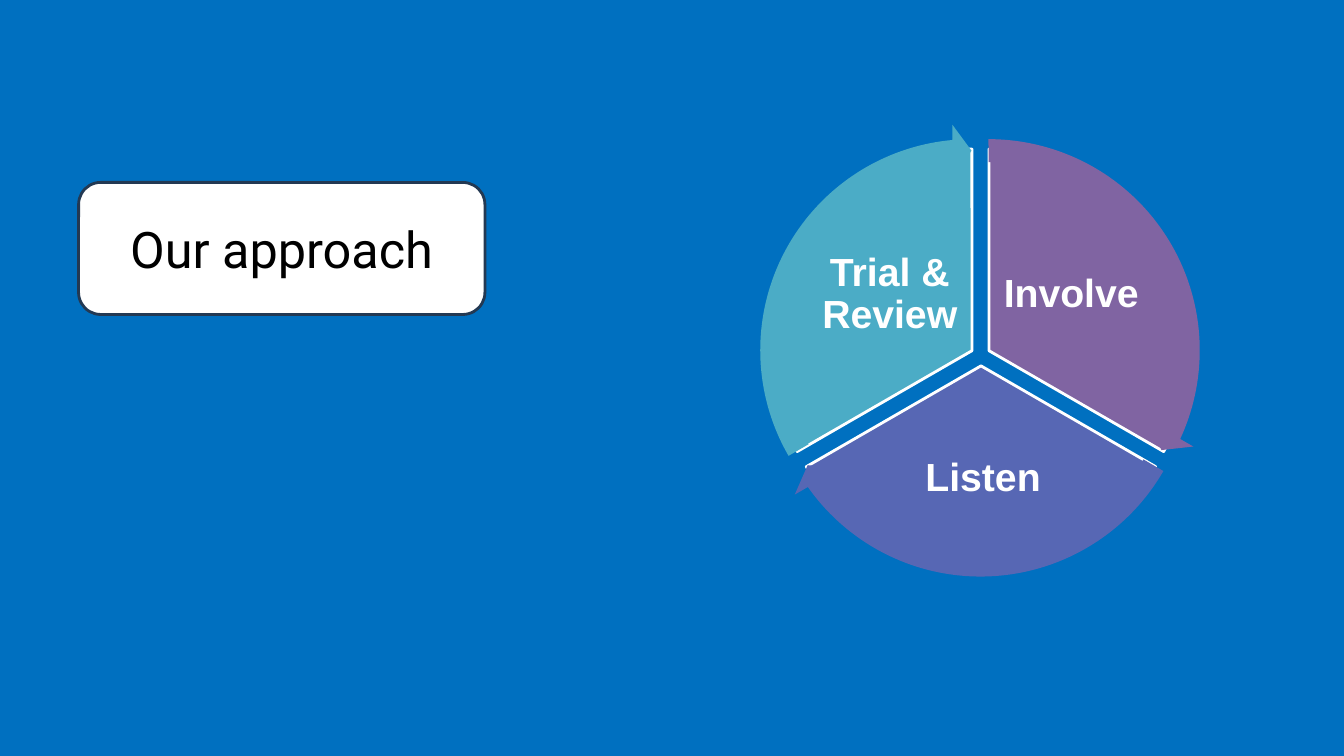
from pptx import Presentation
from pptx.dml.color import RGBColor
from pptx.enum.shapes import MSO_SHAPE
from pptx.enum.text import MSO_ANCHOR, PP_ALIGN
from pptx.util import Inches, Pt

PIE = MSO_SHAPE.PIE
CIRCULAR_ARROW = MSO_SHAPE.CIRCULAR_ARROW
ROUNDED = MSO_SHAPE.ROUNDED_RECTANGLE
MIDDLE = MSO_ANCHOR.MIDDLE
CENTER = PP_ALIGN.CENTER

COLORS = {
    "background": "0070C0",
    "white": "FFFFFF",
    "black": "000000",
    "navy": "233953",
    "purple": "8064A2",
    "indigo": "5767B4",
    "teal": "4BACC6",
}

PIE_SIZE = 4
ARROW_SIZE = 4.49
ARROW_OFFSET = 0.25

# Label, colour, pie corner, pie angles, arrow angles, label box
STAGES = [
    ("Involve", "purple", (7.81, 1.48), (162, 18),
     (14.73, 161.99), (9.91, 2.33, 1.43, 1.19)),
    ("Listen", "indigo", (7.73, 1.63), (18, 90),
     (86.72, 18.01), (8.68, 4.22, 2.14, 1.05)),
    ("Trial & Review", "teal", (7.64, 1.48), (90, 162),
     (158.73, 90), (8.11, 2.33, 1.43, 1.19)),
]


def write_text(shape, text, font="Arial", size=28, color="white", bold=False,
               line_spacing=None, inset=None):
    """Fill a shape with one centred paragraph."""
    frame = shape.text_frame
    frame.word_wrap = True
    frame.vertical_anchor = MIDDLE
    if inset is not None:
        frame.margin_left = frame.margin_right = Inches(inset)
        frame.margin_top = frame.margin_bottom = Inches(inset)
    paragraph = frame.paragraphs[0]
    paragraph.alignment = CENTER
    if line_spacing:
        paragraph.line_spacing = line_spacing
    run = paragraph.add_run()
    run.text = text
    run.font.name = font
    run.font.size = Pt(size)
    run.font.bold = bold
    run.font.color.rgb = RGBColor.from_string(COLORS[color])


class SlideBuilder:
    """Holds the palette and the slide being built."""

    def __init__(self, slide, colors):
        self.slide = slide
        self.colors = colors

    def rgb(self, name):
        return RGBColor.from_string(self.colors[name])

    def background(self, color):
        fill = self.slide.background.fill
        fill.solid()
        fill.fore_color.rgb = self.rgb(color)

    def shape(self, kind, box, fill, line=None, adjustments=()):
        shape = self.slide.shapes.add_shape(kind, *map(Inches, box))
        shape.shadow.inherit = False
        for index, value in enumerate(adjustments):
            shape.adjustments[index] = value
        shape.fill.solid()
        shape.fill.fore_color.rgb = self.rgb(fill)
        if line:
            shape.line.color.rgb = self.rgb(line)
            shape.line.width = Pt(2)
        else:
            shape.line.fill.background()
        return shape

    def label(self, box, text, **text_format):
        textbox = self.slide.shapes.add_textbox(*map(Inches, box))
        write_text(textbox, text, **text_format)


def main():
    presentation = Presentation()
    presentation.slide_width = Inches(13.33)
    presentation.slide_height = Inches(7.5)
    slide = presentation.slides.add_slide(presentation.slide_layouts[6])
    builder = SlideBuilder(slide, COLORS)
    builder.background("background")

    # Cycle wedges with their labels
    for text, color, corner, angles, _, label_box in STAGES:
        builder.shape(PIE, (*corner, PIE_SIZE, PIE_SIZE), color,
                      line="white", adjustments=angles)
        builder.label(label_box, text, bold=True, line_spacing=0.9, inset=0.04)

    # Arrows around the wedges
    for _, color, (left, top), _, (end, start), _ in STAGES:
        box = (left - ARROW_OFFSET, top - ARROW_OFFSET, ARROW_SIZE, ARROW_SIZE)
        builder.shape(CIRCULAR_ARROW, box, color,
                      adjustments=(0.051, 3.275, end, start, 0.059))

    # Title box
    title = builder.shape(ROUNDED, (0.78, 1.81, 4.03, 1.31), "white", line="navy")
    write_text(title, "Our approach", font="Roboto", size=36, color="black")

    presentation.save("out.pptx")


if __name__ == "__main__":
    main()
